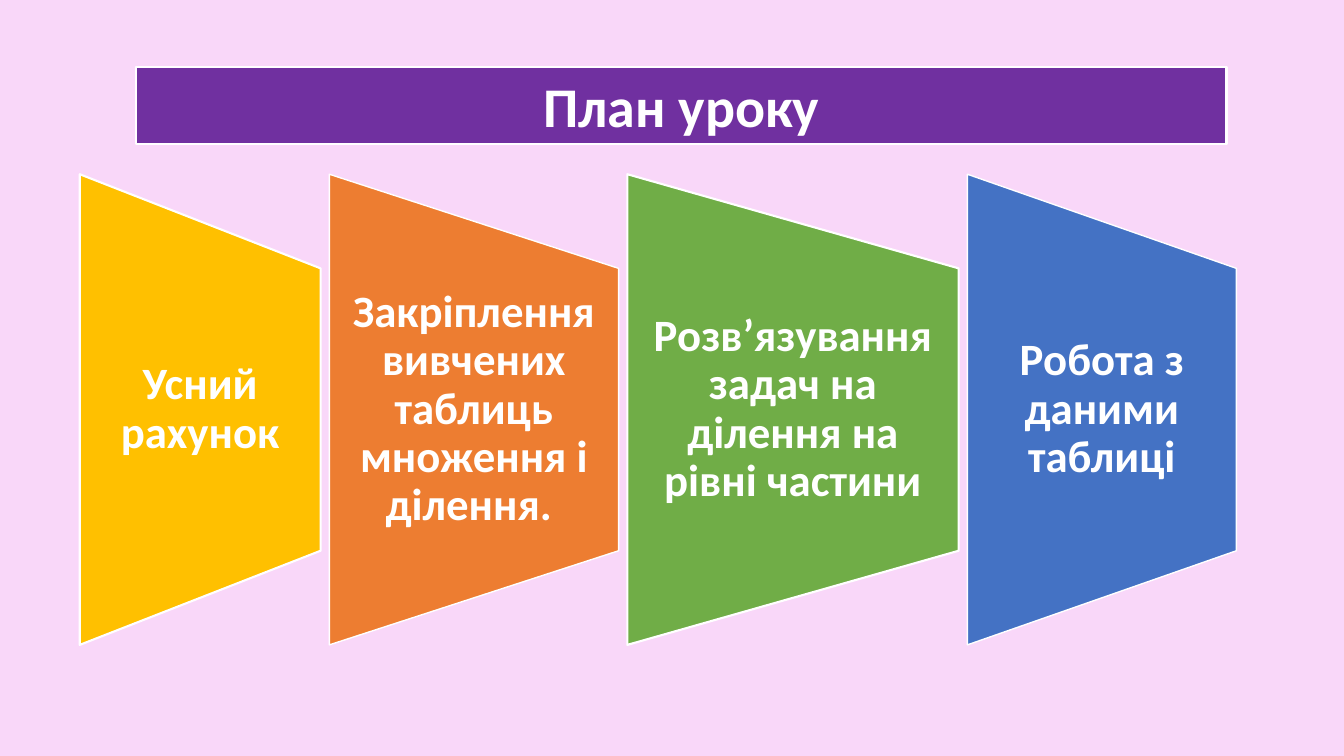
from pptx import Presentation
from pptx.dml.color import RGBColor
from pptx.enum.shapes import MSO_SHAPE
from pptx.enum.text import MSO_ANCHOR, MSO_AUTO_SIZE, PP_ALIGN
from pptx.util import Cm, Pt

TRAPEZOID = MSO_SHAPE.FLOWCHART_MANUAL_OPERATION
MIDDLE = MSO_ANCHOR.MIDDLE
CENTER = PP_ALIGN.CENTER
NO_AUTOFIT = MSO_AUTO_SIZE.NONE

PINK = RGBColor(0xF9, 0xD7, 0xF9)
PURPLE = RGBColor(0x70, 0x30, 0xA0)
YELLOW = RGBColor(0xFF, 0xC0, 0x00)
ORANGE = RGBColor(0xED, 0x7D, 0x31)
GREEN = RGBColor(0x70, 0xAD, 0x47)
BLUE = RGBColor(0x44, 0x72, 0xC4)
WHITE = RGBColor(0xFF, 0xFF, 0xFF)

# Text, fill, width in cm, outline in points
STEPS = [
    ("Усний рахунок", YELLOW, 6.07, 1.5),
    ("Закріплення вивчених таблиць множення і ділення. ", ORANGE, 7.29, 1),
    ("Розв’язування задач на ділення на рівні частини", GREEN, 8.35, 1.5),
    ("Робота з даними таблиці", BLUE, 6.78, 1),
]
STEPS_LEFT, STEPS_TOP, STEP_HEIGHT, STEP_GAP = 2.01, 4.39, 11.86, 0.22
TEXT_HEIGHT = 7.11


class LessonSlide:
    font_name = "Calibri"

    def __init__(self, deck):
        self.page = deck.slides.add_slide(deck.slide_layouts[5])
        background = self.page.background.fill
        background.solid()
        background.fore_color.rgb = PINK

    def paint(self, shape, color, outline):
        shape.fill.solid()
        shape.fill.fore_color.rgb = color
        shape.line.color.rgb = WHITE
        shape.line.width = Pt(outline)

    def set_text(self, box, text, size, spacing):
        frame = box.text_frame
        frame.word_wrap = True
        frame.auto_size = NO_AUTOFIT
        frame.vertical_anchor = MIDDLE
        frame.text = text
        para = frame.paragraphs[0]
        para.alignment = CENTER
        para.line_spacing = spacing
        font = para.font
        font.name, font.size, font.bold = self.font_name, Pt(size), True
        font.color.rgb = WHITE

    def title(self, text, left, top, width, height):
        box = self.page.shapes.title
        box.left, box.top = Cm(left), Cm(top)
        box.width, box.height = Cm(width), Cm(height)
        self.paint(box, PURPLE, 1.5)
        self.set_text(box, text, 40, 1.0)

    def trapezoid(self, left, top, width, height, color, outline):
        """Draw a trapezoid on its side; the frame is the one seen after turning."""
        shift = (height - width) / 2
        shape = self.page.shapes.add_shape(
            TRAPEZOID, Cm(left - shift), Cm(top + shift), Cm(height), Cm(width))
        shape.rotation = 270
        shape.shadow.inherit = False
        self.paint(shape, color, outline)

    def label(self, text, left, top, width, height):
        box = self.page.shapes.add_textbox(Cm(left), Cm(top), Cm(width), Cm(height))
        frame = box.text_frame
        frame.margin_left = frame.margin_right = Cm(0.56)
        frame.margin_top = frame.margin_bottom = 0
        self.set_text(box, text, 32, 0.9)


def main():
    deck = Presentation()
    deck.slide_width, deck.slide_height = Cm(33.87), Cm(19.05)
    slide = LessonSlide(deck)
    slide.title("План уроку", 3.43, 1.68, 27.48, 1.95)

    left = STEPS_LEFT
    text_top = STEPS_TOP + (STEP_HEIGHT - TEXT_HEIGHT) / 2
    for text, color, width, outline in STEPS:
        slide.trapezoid(left, STEPS_TOP, width, STEP_HEIGHT, color, outline)
        slide.label(text, left, text_top, width, TEXT_HEIGHT)
        left += width + STEP_GAP

    deck.save("out.pptx")


if __name__ == "__main__":
    main()
